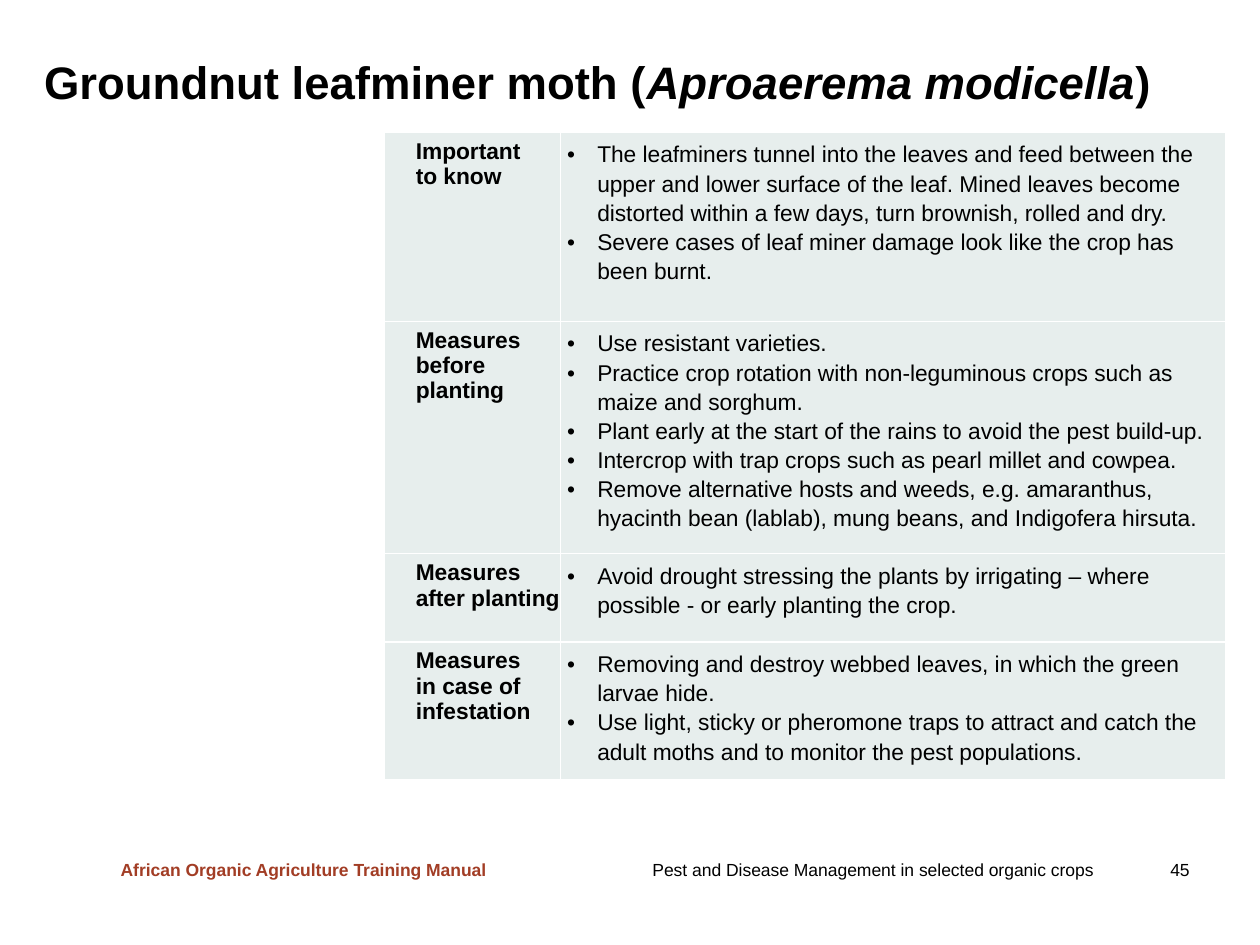
from lxml import etree
from pptx import Presentation
from pptx import util as u
from pptx.dml.color import RGBColor
from pptx.enum import text
from pptx.oxml.ns import qn

FONT = "Arial"
BLACK, WHITE, RUST, MIST = "000000", "FFFFFF", "A23D25", "E7EEED"

TITLE = [("Groundnut leafminer moth (", False),
         ("Aproaerema modicella", True),
         (")", False)]
COLUMN_WIDTHS = [1.4, 5.28]
ROWS = [
    (1.5, "Important \vto know", [
        "The leafminers tunnel into the leaves and feed between the upper and lower surface "
        "of the leaf. Mined leaves become distorted within a few days, turn brownish, rolled and dry.",
        "Severe cases of leaf miner damage look like the crop has been burnt."]),
    (1.82, "Measures \vbefore planting", [
        "Use resistant varieties.",
        "Practice crop rotation with non-leguminous crops such as maize and sorghum.",
        "Plant early at the start of the rains to avoid the pest build-up.",
        "Intercrop with trap crops such as pearl millet and cowpea.",
        "Remove alternative hosts and weeds, e.g. amaranthus, hyacinth bean (lablab), "
        "mung beans, and Indigofera hirsuta."]),
    (0.7, "Measures \vafter planting", [
        "Avoid drought stressing the plants by irrigating – where possible - or early planting the crop."]),
    (1.03, "Measures \vin case of infestation", [
        "Removing and destroy webbed leaves, in which the green larvae hide.",
        "Use light, sticky or pheromone traps to attract and catch the adult moths "
        "and to monitor the pest populations."]),
]


def color(value):
    return RGBColor.from_string(value)


def add_text(para, content, size=13, fill=BLACK, bold=False, italic=False):
    first = len(para.runs)
    for index, line in enumerate(content.split("\v")):
        if index:
            para.add_line_break()
        para.add_run().text = line
    for span in para.runs[first:]:
        font = span.font
        font.name, font.size = FONT, u.Pt(size)
        font.bold, font.italic = bold, italic
        font.color.rgb = color(fill)


def set_indent(para, left, first=0):
    properties = para._p.get_or_add_pPr()
    properties.set("marL", str(u.Inches(left)))
    properties.set("indent", str(u.Inches(first)))
    return properties


def add_bullet(para):
    properties = set_indent(para, 0.24, -0.24)
    etree.SubElement(properties, qn("a:buFont"), typeface=FONT)
    etree.SubElement(properties, qn("a:buChar"), char="•")


def add_tab(para, position):
    tabs = etree.SubElement(para._p.get_or_add_pPr(), qn("a:tabLst"))
    etree.SubElement(tabs, qn("a:tab"), pos=str(u.Inches(position)), algn="l")


def style_cell(cell, right_margin):
    cell.margin_left = cell.margin_top = cell.margin_bottom = u.Inches(0.05)
    cell.margin_right = u.Inches(right_margin)
    properties = cell._tc.get_or_add_tcPr()
    for side in ("lnL", "lnR", "lnT", "lnB"):
        line = etree.SubElement(properties, qn(f"a:{side}"), w=str(u.Pt(1)))
        solid = etree.SubElement(line, qn("a:solidFill"))
        etree.SubElement(solid, qn("a:srgbClr"), val=WHITE)
    cell.fill.solid()
    cell.fill.fore_color.rgb = color(MIST)


def add_title(page):
    box = page.shapes.title
    box.left, box.top, box.width, box.height = map(u.Inches, (0.35, 0.4, 9.06, 0.54))
    frame = box.text_frame
    frame.auto_size = text.MSO_AUTO_SIZE.NONE
    frame.word_wrap = True
    frame.vertical_anchor = text.MSO_ANCHOR.MIDDLE
    frame.margin_left = frame.margin_top = 0
    frame.margin_right, frame.margin_bottom = u.Inches(0.1), u.Inches(0.05)
    para = frame.paragraphs[0]
    para.alignment = text.PP_ALIGN.LEFT
    for content, italic in TITLE:
        add_text(para, content, size=26, bold=True, italic=italic)


def add_measures(page):
    height = sum(row[0] for row in ROWS)
    table = page.shapes.add_table(
        len(ROWS), len(COLUMN_WIDTHS), u.Inches(3.05), u.Inches(1.05),
        u.Inches(sum(COLUMN_WIDTHS)), u.Inches(height)).table
    table.first_row = table.horz_banding = False
    for column, width in zip(table.columns, COLUMN_WIDTHS):
        column.width = u.Inches(width)
    for row, (height, label, points) in zip(table.rows, ROWS):
        row.height = u.Inches(height)
        label_cell, points_cell = row.cells
        style_cell(label_cell, 0)
        style_cell(points_cell, 0.05)
        para = label_cell.text_frame.paragraphs[0]
        set_indent(para, 0.2)
        add_text(para, label, bold=True)
        frame = points_cell.text_frame
        for index, point in enumerate(points):
            para = frame.add_paragraph() if index else frame.paragraphs[0]
            add_bullet(para)
            para.line_spacing = 1.15
            add_text(para, point)


def add_footer(page, left, width, content, tab=None, wrap=True, **style):
    box = page.shapes.add_textbox(u.Inches(left), u.Inches(6.77), u.Inches(width), u.Inches(0.27))
    frame = box.text_frame
    frame.word_wrap = wrap
    frame.vertical_anchor = text.MSO_ANCHOR.MIDDLE
    para = frame.paragraphs[0]
    if tab:
        add_tab(para, tab)
    add_text(para, content, size=10, **style)


def main():
    deck = Presentation()
    deck.slide_width, deck.slide_height = u.Inches(10), u.Inches(7.5)
    page = deck.slides.add_slide(deck.slide_layouts[5])
    add_footer(page, 5.08, 4.84, "Pest and Disease Management in selected organic crops\t45", tab=4.11)
    add_footer(page, 0.86, 3.14, "African Organic Agriculture Training Manual",
               wrap=False, fill=RUST, bold=True)
    add_title(page)
    add_measures(page)
    deck.save("out.pptx")


if __name__ == "__main__":
    main()
